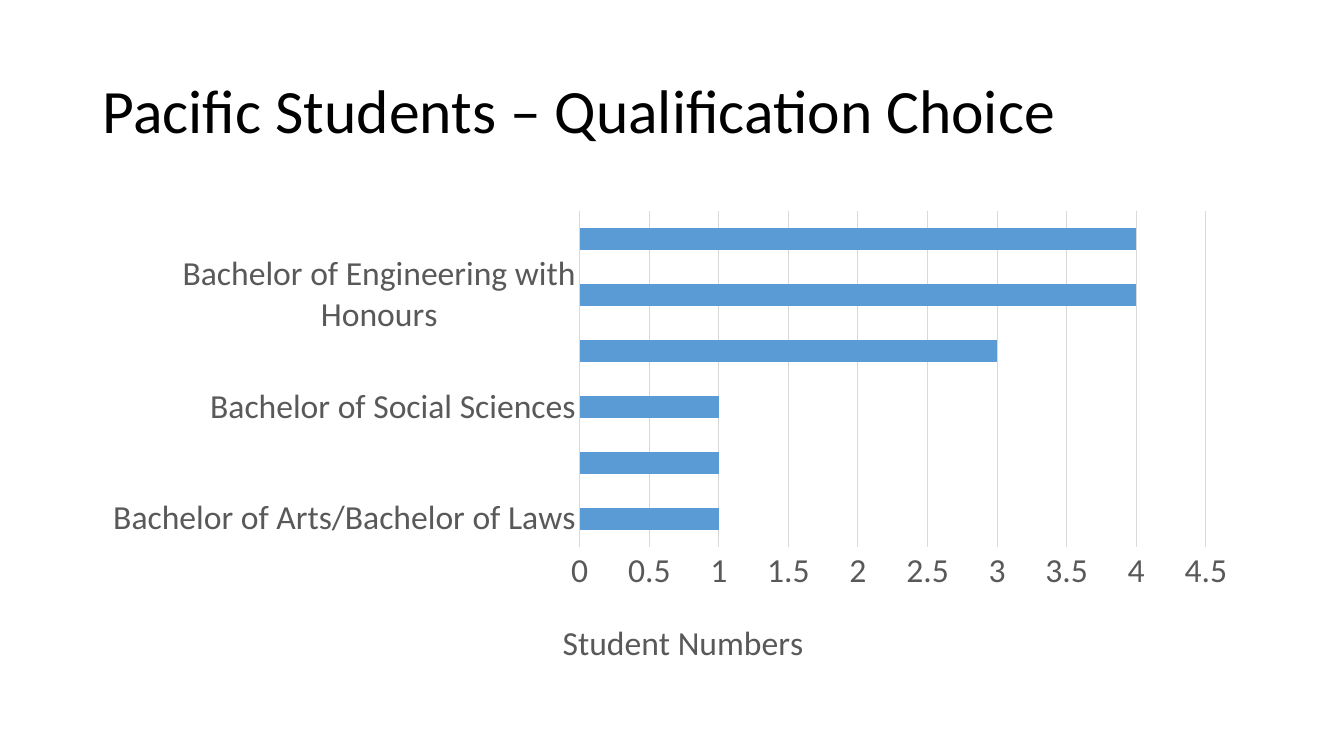
from lxml import etree
from pptx import Presentation
from pptx.chart.data import CategoryChartData
from pptx.dml.color import RGBColor
from pptx.enum.chart import XL_CHART_TYPE, XL_TICK_MARK
from pptx.enum.text import MSO_ANCHOR, MSO_AUTO_SIZE, PP_ALIGN
from pptx.oxml.ns import qn
from pptx.util import Inches, Pt

BAR_CLUSTERED = XL_CHART_TYPE.BAR_CLUSTERED
NO_TICKS = XL_TICK_MARK.NONE
MIDDLE = MSO_ANCHOR.MIDDLE
NO_AUTOFIT = MSO_AUTO_SIZE.NONE
LEFT = PP_ALIGN.LEFT

# Content
HEADING = "Pacific Students – Qualification Choice"
AXIS_CAPTION = "Student Numbers"
STUDENTS = {
    "Bachelor of Arts/Bachelor of Laws": 1,
    "Bachelor of Science": 1,
    "Bachelor of Social Sciences": 1,
    "Bachelor of Arts": 3,
    "Bachelor of Engineering with Honours": 4,
    "Bachelor of Laws": 4,
}

# Style
FONT = "Calibri"
BLACK = RGBColor(0x00, 0x00, 0x00)
GREY = RGBColor(0x59, 0x59, 0x59)
GRID_GREY = RGBColor(0xD9, 0xD9, 0xD9)
BLUE = RGBColor(0x5B, 0x9B, 0xD5)

# Layout: a common column, and shares of the chart for its parts
MARGIN, COLUMN = Inches(0.92), Inches(11.5)
PLOT_SHARES = {"x": 0.42, "y": 0.02, "w": 0.54, "h": 0.7}
CAPTION_SHARES = {"x": 0.4, "y": 0.86}


def style_font(font, size, color):
    font.name, font.size, font.bold = FONT, Pt(size), False
    font.color.rgb = color


def place(chart_part, index, shares):
    """Give a chart part a fixed position inside the chart."""
    for old in chart_part.findall(qn("c:layout")):
        chart_part.remove(old)
    layout = etree.Element(qn("c:layout"))
    manual = etree.SubElement(layout, qn("c:manualLayout"))
    settings = {"xMode": "edge", "yMode": "edge", **shares}
    if "w" in shares:
        settings = {"layoutTarget": "inner", **settings}
    for tag, value in settings.items():
        etree.SubElement(manual, qn("c:" + tag)).set("val", str(value))
    chart_part.insert(index, layout)


prs = Presentation()
prs.slide_width, prs.slide_height = Inches(13.33), Inches(7.5)
slide = prs.slides.add_slide(prs.slide_layouts[5])

# Heading
heading = slide.shapes.title
heading.left, heading.top = MARGIN, Inches(0.4)
heading.width, heading.height = COLUMN, Inches(1.45)
heading_frame = heading.text_frame
heading_frame.text = HEADING
heading_frame.auto_size = NO_AUTOFIT
heading_frame.vertical_anchor = MIDDLE
heading_line = heading_frame.paragraphs[0]
heading_line.alignment = LEFT
heading_line.line_spacing = 0.9
style_font(heading_line.font, 44, BLACK)

# Chart
numbers = CategoryChartData()
numbers.categories = list(STUDENTS)
numbers.add_series("Series 1", list(STUDENTS.values()))
chart = slide.shapes.add_chart(
    BAR_CLUSTERED, MARGIN, Inches(2), COLUMN, Inches(4.76), numbers).chart
style_font(chart.font, 10, BLACK)
chart.has_legend = False
chart.has_title = False

# Bars
bars = chart.plots[0]
bars.gap_width = 150
bars.vary_by_categories = False
bar_fill = bars.series[0].format.fill
bar_fill.solid()
bar_fill.fore_color.rgb = BLUE

# Axes
count_axis = chart.value_axis
for axis in (chart.category_axis, count_axis):
    axis.major_tick_mark = axis.minor_tick_mark = NO_TICKS
    axis.format.line.fill.background()
    style_font(axis.tick_labels.font, 24, GREY)
count_axis.minimum_scale, count_axis.maximum_scale = 0, 4.5
count_axis.major_unit = 0.5
count_axis.has_major_gridlines = True
gridline = count_axis.major_gridlines.format.line
gridline.color.rgb = GRID_GREY
gridline.width = Pt(0.75)

# Axis caption and plot position
caption = count_axis.axis_title
caption.text_frame.text = AXIS_CAPTION
style_font(caption.text_frame.paragraphs[0].font, 24, GREY)
caption_element = count_axis._element.find(qn("c:title"))
place(caption_element, 1, CAPTION_SHARES)
place(chart._chartSpace.chart.plotArea, 0, PLOT_SHARES)

prs.save("out.pptx")
